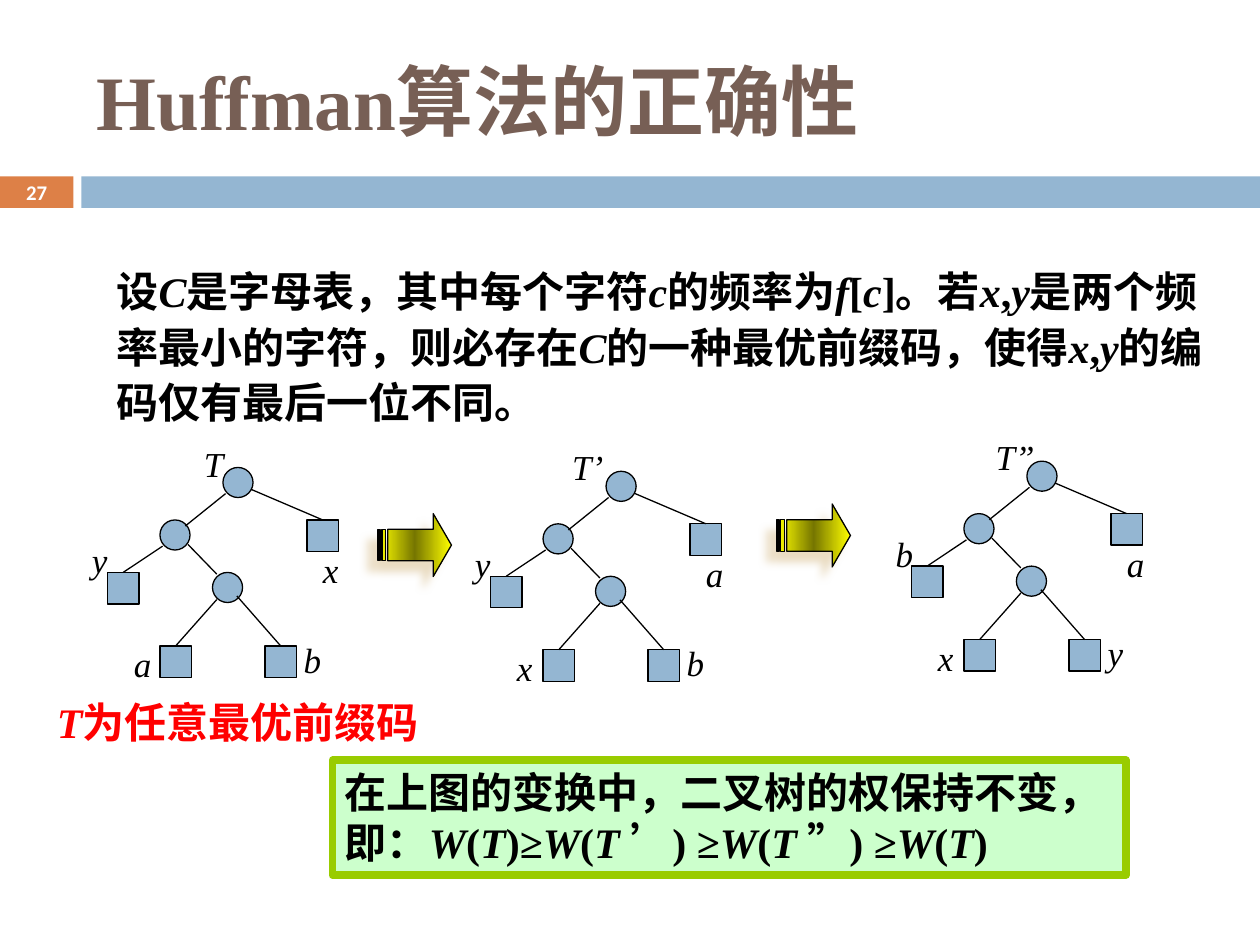
from lxml import etree
from pptx import Presentation
from pptx import util as u
from pptx.dml import color
from pptx.enum import shapes, text
from pptx.oxml import ns

SERIF = "Times New Roman"
BLUE, BLACK, WHITE = "94B6D2", "000000", "FFFFFF"
TITLE = "Huffman算法的正确性"
PAGE = "27"

# Runs alternate between upright and italic, beginning with upright.
LEMMA = ["设", "C", "是字母表，其中每个字符", "c", "的频率为", "f", "[", "c", "]。若", "x", ",", "y",
         "是两个频率最小的字符，则必存在", "C", "的一种最优前缀码，使得", "x", ",", "y",
         "的编码仅有最后一位不同。"]
CONCLUSION = ["在上图的变换中，二叉树的权保持不变，即：", "W", "(", "T", ")≥", "W", "(", "T ",
              "’) ≥", "W", "(", "T ", "”) ≥", "W", "(", "T", ")"]
ASSUMPTION = ["", "T", "为任意最优前缀码"]

TREES = [
    {"root": (127.4, 267.1), "name": ("T", -18), "leaves": "yxab"},
    {"root": (346.3, 269.3), "name": ("T’", -26.5), "leaves": "yaxb"},
    {"root": (586.8, 263.5), "name": ("T”", -25), "leaves": "baxy"},
]
NODE, LEAF = 17.2, 18
NODES = [(0, 0), (-36, 30), (-6, 60)]
INNER_EDGES = [((1.5, 15), (-21.5, 33.5)), ((-20, 44), (-3.5, 61))]
LEAVES = [
    {"at": (-66, 60), "label": (-82, 37), "edge_from": (-34.5, 45)},
    {"at": (48, 30), "label": (50, 43), "edge_from": (16, 12.5)},
    {"at": (-36, 102), "label": (-58, 96.5), "edge_from": (-3.5, 75.5)},
    {"at": (24, 102), "label": (39, 94), "edge_from": (8, 73.5)},
]
STEPS = [(216, 293.5), (444, 288)]


def rgb(value):
    return color.RGBColor.from_string(value)


def points(*values):
    return [u.Pt(value) for value in values]


def write(frame, runs, size, ink=BLACK, bold=True, font=SERIF, spacing=None):
    frame.word_wrap = True
    paragraph = frame.paragraphs[0]
    paragraph.alignment = text.PP_ALIGN.LEFT
    paragraph.line_spacing = spacing
    for index, words in enumerate(runs):
        if words:
            run = paragraph.add_run()
            run.text = words
            run.font.name, run.font.size = font, u.Pt(size)
            run.font.bold, run.font.italic = bold, index % 2 == 1
            run.font.color.rgb = rgb(ink)
    return paragraph


def add_text(slide, box, runs, size, **style):
    frame = slide.shapes.add_textbox(*points(*box)).text_frame
    write(frame, runs, size, **style)


def add_block(slide, kind, box, fill=BLUE, line=BLACK, width=0.75):
    block = slide.shapes.add_shape(kind, *points(*box))
    block.shadow.inherit = False
    if fill:
        block.fill.solid()
        block.fill.fore_color.rgb = rgb(fill)
    if line:
        block.line.color.rgb = rgb(line)
        block.line.width = u.Pt(width)
    else:
        block.line.fill.background()
    return block


def add_edge(slide, start, end, leaf=None):
    edge = slide.shapes.add_connector(shapes.MSO_CONNECTOR.STRAIGHT, *points(*start, *end))
    edge.line.color.rgb = rgb(BLACK)
    edge.line.width = u.Pt(0.75)
    etree.SubElement(edge._element.spPr, ns.qn("a:effectLst"))
    if leaf is not None:
        edge.end_connect(leaf, 0)


def add_tree(slide, tree):
    left, top = tree["root"]

    def place(offset):
        return left + offset[0], top + offset[1]

    for node in NODES:
        add_block(slide, shapes.MSO_SHAPE.OVAL, (*place(node), NODE, NODE))
    for start, end in INNER_EDGES:
        add_edge(slide, place(start), place(end))
    for leaf, letter in zip(LEAVES, tree["leaves"]):
        x, y = place(leaf["at"])
        square = add_block(slide, shapes.MSO_SHAPE.RECTANGLE, (x, y, LEAF, LEAF))
        add_edge(slide, place(leaf["edge_from"]), (x + LEAF / 2, y), square)
        add_text(slide, (*place(leaf["label"]), 30, 31), ["", letter], 20, bold=False)
    name, shift = tree["name"]
    add_text(slide, (*place((shift, -18)), 60, 31), ["", name], 20, bold=False)


def add_step(slide, position):
    arrow = add_block(slide, shapes.MSO_SHAPE.STRIPED_RIGHT_ARROW, (*position, 42, 36), fill=None)
    arrow.adjustments[0], arrow.adjustments[1] = 0.5, 0.29
    properties = arrow._element.spPr
    gradient = etree.Element(ns.qn("a:gradFill"), rotWithShape="1")
    stops = etree.SubElement(gradient, ns.qn("a:gsLst"))
    for position, shade in ((0, "FFFF00"), (50000, "767600"), (100000, "FFFF00")):
        stop = etree.SubElement(stops, ns.qn("a:gs"), pos=str(position))
        etree.SubElement(stop, ns.qn("a:srgbClr"), val=shade)
    etree.SubElement(gradient, ns.qn("a:lin"), ang="0", scaled="1")
    properties.find(ns.qn("a:prstGeom")).addnext(gradient)
    shadow = etree.SubElement(properties.find(ns.qn("a:effectLst")), ns.qn("a:outerShdw"),
                              blurRad=str(u.Pt(5)), dist=str(u.Pt(8.5)), dir="8100000",
                              algn="ctr", rotWithShape="0")
    etree.SubElement(shadow, ns.qn("a:srgbClr"), val="EBDDC3")


def main():
    deck = Presentation()
    deck.slide_width, deck.slide_height = points(720, 540)
    slide = deck.slides.add_slide(deck.slide_layouts[5])

    title = slide.shapes.title
    title.left, title.top, title.width, title.height = points(48, 18, 642, 78)
    title.text_frame.vertical_anchor = text.MSO_ANCHOR.MIDDLE
    write(title.text_frame, [TITLE], 44, ink="775F55")

    rectangle = shapes.MSO_SHAPE.RECTANGLE
    page_tab = add_block(slide, rectangle, (0, 100.8, 42, 18), fill="DD8047", line=None)
    write(page_tab.text_frame, [PAGE], 11.9, ink=WHITE,
          font="Calibri").alignment = text.PP_ALIGN.CENTER
    add_block(slide, rectangle, (46.5, 100.8, 673.5, 18), line=None)

    add_text(slide, (59.5, 145.5, 636, 103), LEMMA, 24, spacing=1.1)
    for tree in TREES:
        add_tree(slide, tree)
    for position in STEPS:
        add_step(slide, position)

    conclusion = add_block(slide, rectangle, (190, 434.5, 453.5, 65.5),
                           fill="CCFFCC", line="99CC00", width=4.5)
    conclusion.text_frame.vertical_anchor = text.MSO_ANCHOR.TOP
    write(conclusion.text_frame, CONCLUSION, 24)
    add_text(slide, (25.5, 394.5, 238, 37), ASSUMPTION, 24, ink="FF0000")
    deck.save("out.pptx")


if __name__ == "__main__":
    main()
